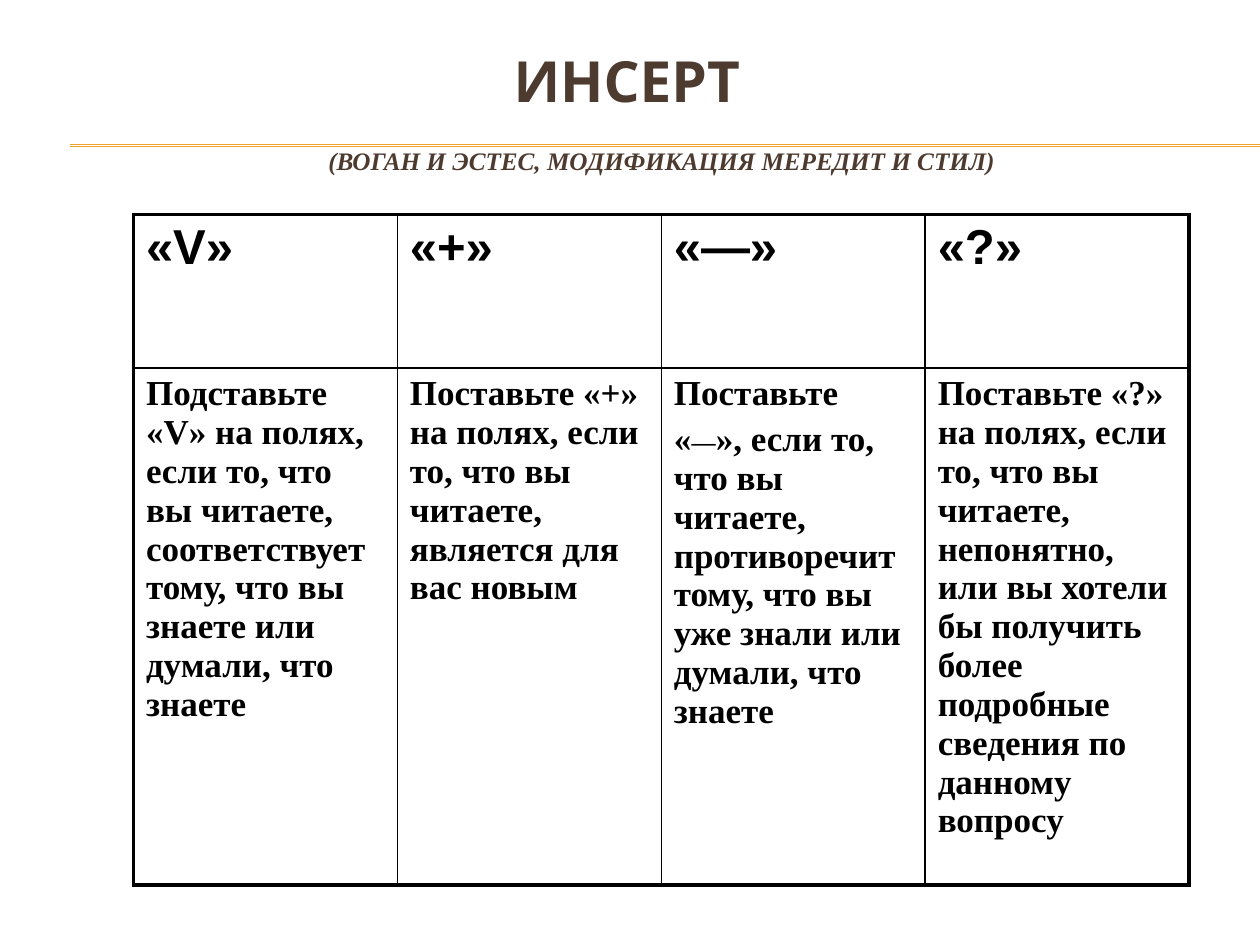
from dataclasses import dataclass

from lxml.etree import SubElement
from pptx import Presentation
from pptx.dml.color import RGBColor
from pptx.enum.shapes import MSO_CONNECTOR
from pptx.enum.text import MSO_ANCHOR, PP_ALIGN
from pptx.oxml.ns import qn
from pptx.util import Cm, Pt


@dataclass(frozen=True)
class Theme:
    ink: str = "000000"
    heading: str = "4E3B30"
    accent: str = "F0A22E"
    title_font: str = "Karla"
    body_font: str = "Times New Roman"
    mark_font: str = "Arial"
    title_size: float = 32.4
    caption_size: float = 14.4
    mark_size: float = 28
    body_size: float = 20
    dash_size: float = 14
    rule_width: float = 0.75
    inner_border: float = 1
    outer_border: float = 2.25


@dataclass(frozen=True)
class Column:
    mark: str
    paragraphs: tuple[str, ...]


@dataclass(frozen=True)
class Area:
    left: float
    top: float
    width: float
    height: float

    def lengths(self) -> tuple:
        return Cm(self.left), Cm(self.top), Cm(self.width), Cm(self.height)


THEME = Theme()
DASH = "—"
COLUMNS = (
    Column("«V»", ("Подставьте «V» на полях, если то, что вы читаете, соответствует "
                   "тому, что вы знаете или думали, что знаете",)),
    Column("«+»", ("Поставьте «+» на полях, если то, что вы читаете, "
                   "является для вас новым",)),
    Column("«—»", ("Поставьте",
                   "«—», если то, что вы читаете, противоречит тому, что вы "
                   "уже знали или думали, что знаете")),
    Column("«?»", ("Поставьте «?» на полях, если то, что вы читаете, непонятно, "
                   "или вы хотели бы получить более подробные сведения "
                   "по данному вопросу",)),
)
TABLE_AREA = Area(2.69, 4.32, 21.28, 12.75)
HEADER_HEIGHT = 3.1


def add_span(para, text: str, *, font: str, size: float, color: str = THEME.ink,
             bold: bool = True, italic: bool = False) -> None:
    span = para.add_run()
    span.text = text
    span.font.name = font
    span.font.size = Pt(size)
    span.font.bold = bold
    span.font.italic = italic
    span.font.color.rgb = RGBColor.from_string(color)


def add_heading(page, area: Area, text: str, **text_format) -> None:
    box = page.shapes.add_textbox(*area.lengths())
    frame = box.text_frame
    frame.word_wrap = True
    frame.vertical_anchor = MSO_ANCHOR.MIDDLE
    frame.margin_top = frame.margin_bottom = 0
    para = frame.paragraphs[0]
    para.alignment = PP_ALIGN.CENTER
    add_span(para, text, color=THEME.heading, **text_format)


def add_rule(page, top: float) -> None:
    rule = page.shapes.add_connector(
        MSO_CONNECTOR.STRAIGHT, Cm(1.42), Cm(top), Cm(25.4), Cm(top))
    rule.line.color.rgb = RGBColor.from_string(THEME.accent)
    rule.line.width = Pt(THEME.rule_width)
    SubElement(rule.element.spPr, qn("a:effectLst"))


def set_borders(cell, outer: dict[str, bool]) -> None:
    properties = cell._tc.get_or_add_tcPr()
    for position, (side, is_outer) in enumerate(outer.items()):
        width = THEME.outer_border if is_outer else THEME.inner_border
        border = SubElement(properties, qn(f"a:{side}"), w=str(int(Pt(width))))
        fill = SubElement(border, qn("a:solidFill"))
        SubElement(fill, qn("a:srgbClr"), val=THEME.ink)
        properties.insert(position, border)


def fill_body(cell, paragraphs: tuple[str, ...]) -> None:
    frame = cell.text_frame
    for index, text in enumerate(paragraphs):
        para = frame.add_paragraph() if index else frame.paragraphs[0]
        para.space_before = Pt(4)
        before, dash, after = text.partition(DASH)
        add_span(para, before, font=THEME.body_font, size=THEME.body_size)
        if dash:
            add_span(para, dash, font=THEME.mark_font, size=THEME.dash_size, bold=False)
            add_span(para, after, font=THEME.body_font, size=THEME.body_size)


def add_marks_table(page, columns: tuple[Column, ...]) -> None:
    last = len(columns) - 1
    table = page.shapes.add_table(2, len(columns), *TABLE_AREA.lengths()).table
    table.first_row = table.horz_banding = False
    table.rows[0].height = Cm(HEADER_HEIGHT)
    table.rows[1].height = Cm(TABLE_AREA.height - HEADER_HEIGHT)
    for index, column in enumerate(columns):
        table.columns[index].width = Cm(TABLE_AREA.width / len(columns))
        header, body = table.cell(0, index), table.cell(1, index)
        add_span(header.text_frame.paragraphs[0], column.mark,
                 font=THEME.mark_font, size=THEME.mark_size)
        fill_body(body, column.paragraphs)
        for row, cell in enumerate((header, body)):
            cell.fill.background()
            set_borders(cell, {"lnL": index == 0, "lnR": index == last,
                               "lnT": row == 0, "lnB": row == 1})


def main() -> None:
    deck = Presentation()
    deck.slide_width, deck.slide_height = Cm(25.4), Cm(19.05)
    page = deck.slides.add_slide(deck.slide_layouts[6])

    # Double rule under the title
    for top in (2.92, 2.95):
        add_rule(page, top)

    # Title and caption
    add_heading(page, Area(2.69, 0.84, 19.89, 1.55), "ИНСЕРТ",
                font=THEME.title_font, size=THEME.title_size)
    add_heading(page, Area(5.34, 2.93, 16, 0.6),
                "(ВОГАН И ЭСТЕС, МОДИФИКАЦИЯ МЕРЕДИТ И СТИЛ)",
                font=THEME.body_font, size=THEME.caption_size, italic=True)

    # Table of reading marks
    add_marks_table(page, COLUMNS)

    deck.save("out.pptx")


if __name__ == "__main__":
    main()
